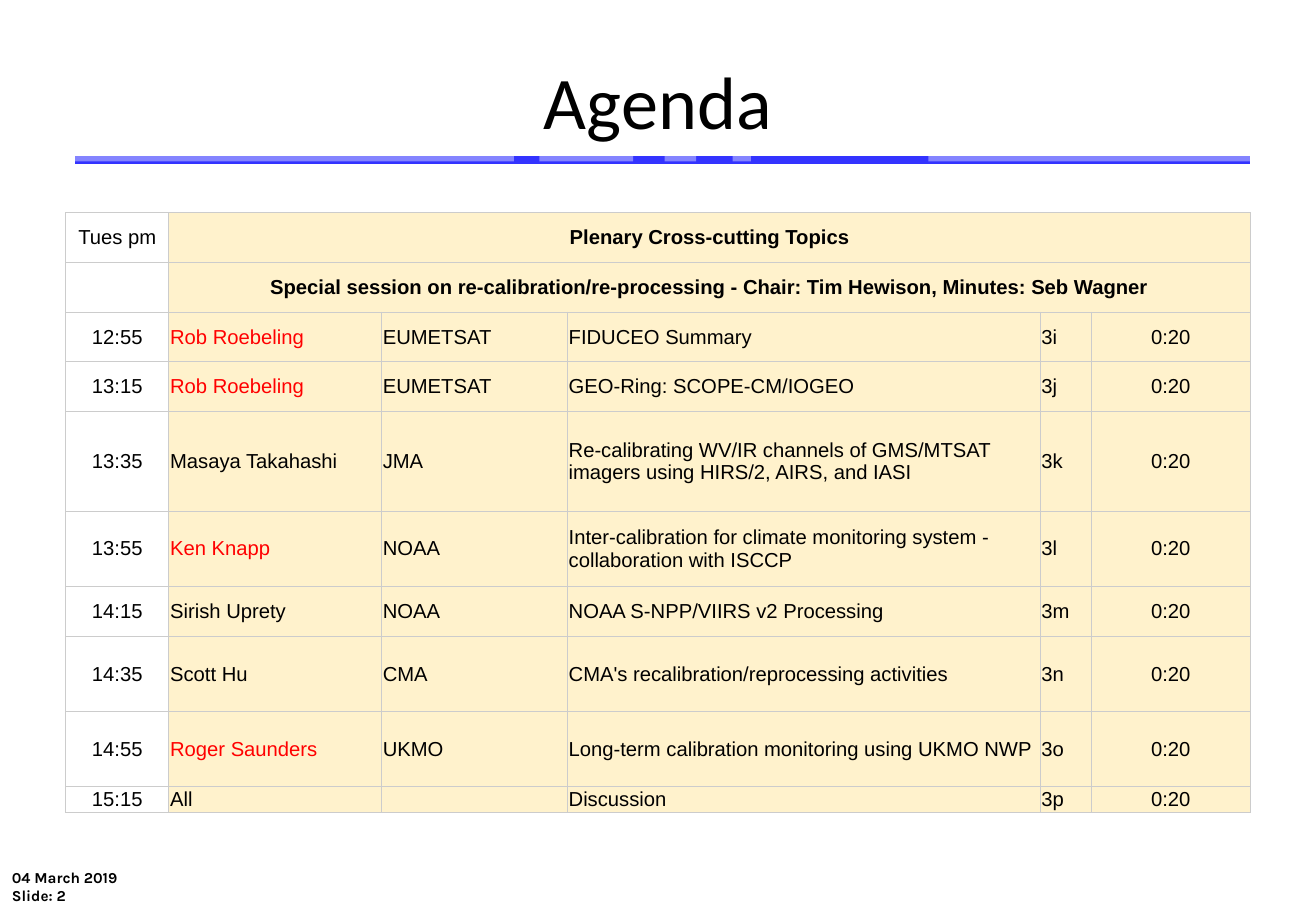
from dataclasses import dataclass

from lxml import etree
from pptx import Presentation
from pptx.dml.color import RGBColor
from pptx.enum.shapes import MSO_CONNECTOR, MSO_SHAPE
from pptx.enum.text import MSO_ANCHOR, PP_ALIGN
from pptx.oxml.ns import qn
from pptx.util import Inches, Pt

CENTER, LEFT = PP_ALIGN.CENTER, PP_ALIGN.LEFT
MIDDLE = MSO_ANCHOR.MIDDLE
RECTANGLE, STRAIGHT = MSO_SHAPE.RECTANGLE, MSO_CONNECTOR.STRAIGHT


@dataclass(frozen=True)
class Theme:
    ink: str = "000000"
    guest: str = "FF0000"
    paper: str = "FFFFFF"
    cream: str = "FFF2CC"
    grid: str = "CCCCCC"
    rule: str = "3333FF"
    title_font: str = "Calibri"
    table_font: str = "Arial"
    footer_font: str = "Karla"
    title_size: float = 44
    table_size: float = 12
    footer_size: float = 9


theme = Theme()


def add_span(para, text, font, size, color=theme.ink, bold=False):
    span = para.add_run()
    span.text = text
    span.font.name = font
    span.font.size = Pt(size)
    span.font.bold = bold
    span.font.color.rgb = RGBColor.from_string(color)


def style_cell(cell, fill):
    """Set the fill, the tight margins and a thin line on all four sides."""
    cell.fill.solid()
    cell.fill.fore_color.rgb = RGBColor.from_string(fill)
    cell.vertical_anchor = MIDDLE
    cell.margin_left = cell.margin_right = Inches(0.01)
    cell.margin_top = cell.margin_bottom = 0
    properties = cell._tc.get_or_add_tcPr()
    for place, side in enumerate(("a:lnL", "a:lnR", "a:lnT", "a:lnB")):
        line = etree.Element(qn(side), w=str(Pt(0.75)))
        solid = etree.SubElement(line, qn("a:solidFill"))
        etree.SubElement(solid, qn("a:srgbClr"), val=theme.grid)
        properties.insert(place, line)


deck = Presentation()
deck.slide_width, deck.slide_height = Inches(10.83), Inches(7.5)
page = deck.slides.add_slide(deck.slide_layouts[5])
left, width = Inches(0.54), Inches(9.75)

# Date and slide number
footer = page.shapes.add_textbox(0, Inches(7.1), Inches(6.86), Inches(0.4)).text_frame
footer.word_wrap = True
for index, text in enumerate(("04 March 2019", "Slide: 2")):
    para = footer.add_paragraph() if index else footer.paragraphs[0]
    add_span(para, text, theme.footer_font, theme.footer_size, bold=True)

# Rule under the title, lightened in stretches by translucent bars
rule = page.shapes.add_connector(
    STRAIGHT, Inches(0.62), Inches(1.32), Inches(10.29), Inches(1.32))
rule.line.color.rgb = RGBColor.from_string(theme.rule)
rule.line.width = Pt(4.5)
etree.SubElement(rule._element.spPr, qn("a:effectLst"))

bars = [(0.01, 4.22), (4.44, 0.77), (5.47, 0.26), (6.03, 0.15), (7.64, 3.19)]
for bar_left, bar_width in bars:
    bar = page.shapes.add_shape(
        RECTANGLE, Inches(bar_left), Inches(1.19), Inches(bar_width), Inches(0.14))
    bar.shadow.inherit = False
    bar.line.fill.background()
    bar.fill.solid()
    bar.fill.fore_color.rgb = RGBColor.from_string(theme.paper)
    tint = bar._element.spPr.find(qn("a:solidFill"))[0]
    etree.SubElement(tint, qn("a:alpha"), val="40000")

# Title
title = page.shapes.title
title.left, title.top, title.width, title.height = left, Inches(0.3), width, Inches(1.04)
title.text_frame.vertical_anchor = MIDDLE
para = title.text_frame.paragraphs[0]
para.alignment = CENTER
add_span(para, "Agenda", theme.title_font, theme.title_size)

# Agenda table
headings = [
    ("Tues pm", "Plenary Cross-cutting Topics"),
    ("", "Special session on re-calibration/re-processing - "
         "Chair: Tim Hewison, Minutes: Seb Wagner"),
]
talks = [
    ("12:55", "Rob Roebeling", "EUMETSAT", "FIDUCEO Summary", "3i"),
    ("13:15", "Rob Roebeling", "EUMETSAT", "GEO-Ring: SCOPE-CM/IOGEO", "3j"),
    ("13:35", "Masaya Takahashi", "JMA",
     "Re-calibrating WV/IR channels of GMS/MTSAT imagers using HIRS/2, AIRS, and IASI", "3k"),
    ("13:55", "Ken Knapp", "NOAA",
     "Inter-calibration for climate monitoring system - collaboration with ISCCP", "3l"),
    ("14:15", "Sirish Uprety", "NOAA", "NOAA S-NPP/VIIRS v2 Processing", "3m"),
    ("14:35", "Scott Hu", "CMA", "CMA's recalibration/reprocessing activities", "3n"),
    ("14:55", "Roger Saunders", "UKMO", "Long-term calibration monitoring using UKMO NWP", "3o"),
    ("15:15", "All", "", "Discussion", "3p"),
]
duration = "0:20"
guests = {"Rob Roebeling", "Ken Knapp", "Roger Saunders"}
column_widths = [0.85, 1.75, 1.53, 3.89, 0.42, 1.31]
row_heights = [0.41, 0.41, 0.41, 0.41, 0.82, 0.62, 0.41, 0.62, 0.62, 0.21]
last = len(column_widths) - 1

rows = [heading + ("",) * (last - 1) for heading in headings]
rows += [talk + (duration,) for talk in talks]

table = page.shapes.add_table(
    len(rows), len(column_widths), left, Inches(1.75), width, Inches(4.95)).table
table.first_row = table.horz_banding = False
for column, size in zip(table.columns, column_widths):
    column.width = Inches(size)
for row, size in zip(table.rows, row_heights):
    row.height = Inches(size)

for r, texts in enumerate(rows):
    is_heading = r < len(headings)
    for c, text in enumerate(texts):
        cell = table.cell(r, c)
        style_cell(cell, theme.cream if c else theme.paper)
        para = cell.text_frame.paragraphs[0]
        para.alignment = CENTER if is_heading or c in (0, last) else LEFT
        if text:
            add_span(para, text, theme.table_font, theme.table_size,
                     theme.guest if text in guests else theme.ink,
                     bold=is_heading and c == 1)
        else:
            etree.SubElement(para._p, qn("a:endParaRPr"), sz=str(theme.table_size * 100))
    if is_heading:
        table.cell(r, 1).merge(table.cell(r, last))

deck.save("out.pptx")
